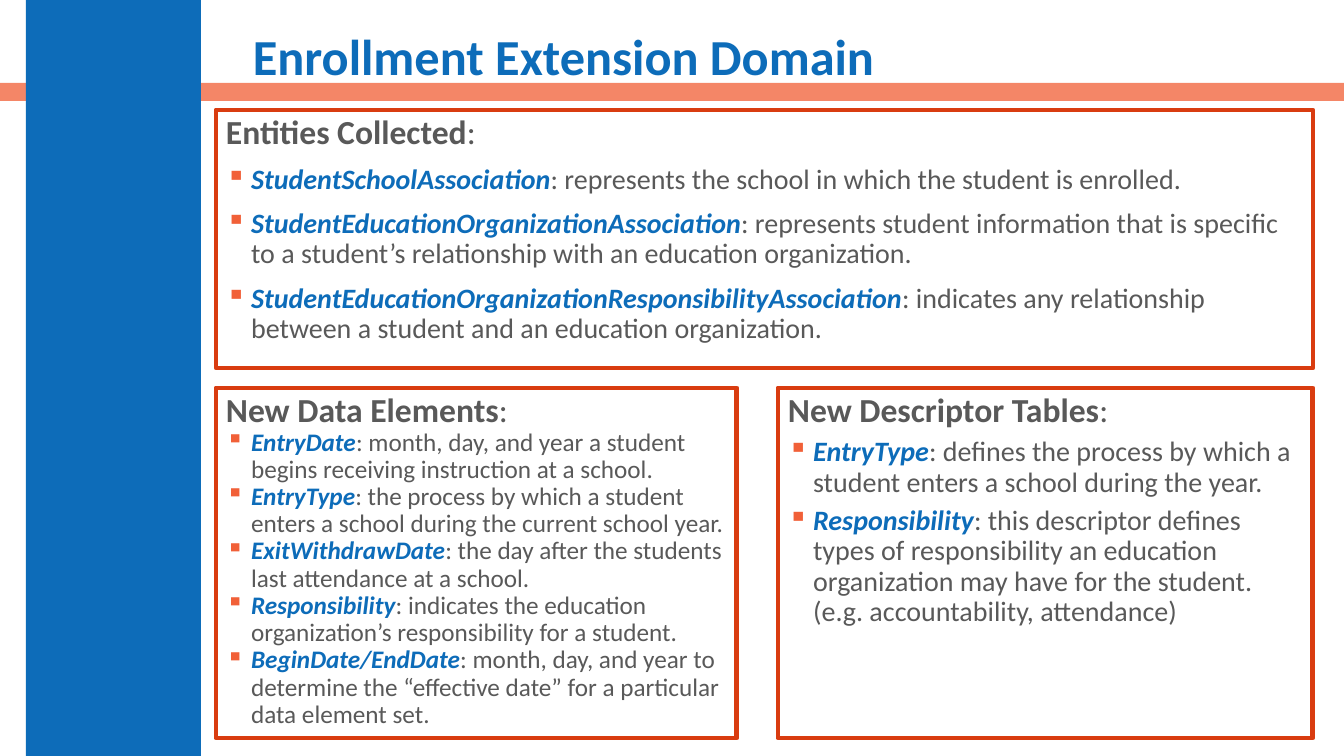
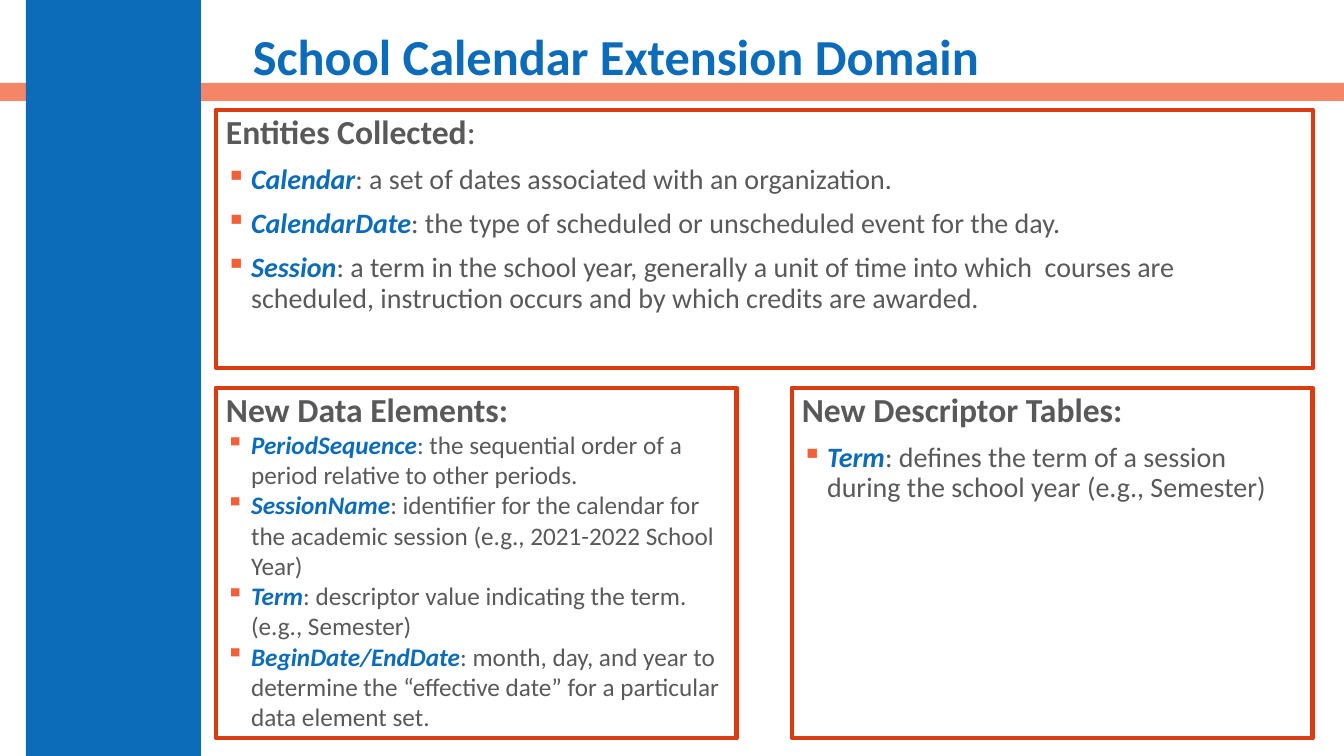
from dataclasses import dataclass

from lxml import etree
from pptx import Presentation
from pptx import util as u
from pptx.dml.color import RGBColor
from pptx.enum import shapes, text
from pptx.oxml.ns import qn


@dataclass(frozen=True)
class Theme:
    font: str = "Calibri"
    blue: str = "0D6CB9"
    coral: str = "F16038"
    red: str = "D93C10"
    gray: str = "595959"
    title: int = 36
    head: int = 24
    body: int = 20
    small: int = 18
    edge: float = 3.5
    tight: float = 0.9
    alpha: int = 76


def px(n):
    return u.Emu(round(n * 12192000 / 1344))


def put(obj, **vals):
    for key, val in vals.items():
        setattr(obj, key, val)


def sub(node, tag, **vals):
    return etree.SubElement(node, qn(tag), **vals)


class Deck:
    def __init__(self, theme):
        self.theme = theme
        self.prs = Presentation()
        put(self.prs, slide_width=px(1344), slide_height=px(756))
        self.slide = None

    def rect(self, x, y, w, h, fill=None, line=None):
        form = self.slide.shapes.add_shape(
            shapes.MSO_SHAPE.RECTANGLE, px(x), px(y), px(w), px(h))
        form.shadow.inherit = False
        if fill:
            form.fill.solid()
            form.fill.fore_color.rgb = RGBColor.from_string(fill)
        else:
            form.fill.background()
        if line:
            form.line.color.rgb = RGBColor.from_string(line)
            form.line.width = u.Pt(self.theme.edge)
        else:
            form.line.fill.background()
        return form

    def run(self, para, words, size, color, **vals):
        run = para.add_run()
        run.text = words
        put(run.font, name=self.theme.font, size=u.Pt(size), **vals)
        run.font.color.rgb = RGBColor.from_string(color)

    def bullet(self, para):
        props = para._p.get_or_add_pPr()
        props.set("marL", str(u.Inches(0.25)))
        props.set("indent", str(-u.Inches(0.25)))
        sub(sub(props, "a:buClr"), "a:srgbClr", val=self.theme.coral)
        sub(props, "a:buChar", char="▪")

    def page(self, title):
        """Start a slide with its band, side bar and title."""
        t = self.theme
        self.slide = self.prs.slides.add_slide(self.prs.slide_layouts[6])
        band = self.rect(0, 83, 1344, 18, t.coral)
        tint = band.fill._xPr.find(".//" + qn("a:srgbClr"))
        sub(tint, "a:alpha", val=str(t.alpha * 1000))
        self.rect(26, 0, 175, 756, t.blue)
        box = self.slide.shapes.add_textbox(px(243), px(18), px(1061), px(83))
        put(box.text_frame, word_wrap=True,
            vertical_anchor=text.MSO_ANCHOR.MIDDLE)
        para = box.text_frame.paragraphs[0]
        para.line_spacing = t.tight
        self.run(para, title, t.title, t.blue, bold=True)

    def panel(self, area, head, items, size, gap, lead=Theme.tight,
              colon=False):
        """Draw a framed list; colon sets whether its colon is bold."""
        t = self.theme
        frame = self.rect(*area, line=t.red).text_frame
        put(frame, word_wrap=True, vertical_anchor=text.MSO_ANCHOR.TOP)
        para = frame.paragraphs[0]
        put(para, alignment=text.PP_ALIGN.LEFT, line_spacing=t.tight)
        self.run(para, head, t.head, t.gray, bold=True)
        self.run(para, ":", t.head, t.gray, bold=colon)
        for term, note in items:
            para = frame.add_paragraph()
            put(para, alignment=text.PP_ALIGN.LEFT, line_spacing=lead,
                space_before=u.Pt(gap))
            self.bullet(para)
            self.run(para, term, size, t.blue, bold=True, italic=True)
            self.run(para, ": " + note, size, t.gray, bold=False)


# Panel areas: left, top, width, height
TOP = (216, 110, 1097, 258)
LEFT = (216, 388, 521, 350)
WIDE = (778, 388, 535, 350)
RIGHT = (792, 388, 521, 350)

# Headings and the item both slides share
ENTITY, DATA, TABLE = (
    "Entities Collected", "New Data Elements", "New Descriptor Tables")
DATES = ("BeginDate/EndDate", "month, day, and year to determine the "
         "“effective date” for a particular data element set.")


def main():
    t = Theme()
    deck = Deck(t)

    # Enrollment
    deck.page("Enrollment Extension Domain")
    deck.panel(TOP, ENTITY, [
        ("StudentSchoolAssociation",
         "represents the school in which the student is enrolled."),
        ("StudentEducationOrganizationAssociation",
         "represents student information that is specific to a student’s "
         "relationship with an education organization."),
        ("StudentEducationOrganizationResponsibilityAssociation",
         "indicates any relationship between a student and an education "
         "organization."),
    ], t.body, 10)
    deck.panel(LEFT, DATA, [
        ("EntryDate", "month, day, and year a student begins receiving "
         "instruction at a school."),
        ("EntryType", "the process by which a student enters a school "
         "during the current school year."),
        ("ExitWithdrawDate",
         "the day after the students last attendance at a school."),
        ("Responsibility", "indicates the education organization’s "
         "responsibility for a student."),
        DATES,
    ], t.small, 0)
    deck.panel(WIDE, TABLE, [
        ("EntryType", "defines the process by which a student enters a "
         "school during the year."),
        ("Responsibility", "this descriptor defines types of responsibility "
         "an education organization may have for the student. "
         "(e.g. accountability, attendance)"),
    ], t.body, 6)

    # School calendar
    deck.page("School Calendar Extension Domain")
    deck.panel(TOP, ENTITY, [
        ("Calendar", "a set of dates associated with an organization."),
        ("CalendarDate",
         "the type of scheduled or unscheduled event for the day."),
        ("Session", "a term in the school year, generally a unit of time "
         "into which  courses are scheduled, instruction occurs and by "
         "which credits are awarded."),
    ], t.body, 10)
    deck.panel(LEFT, DATA, [
        ("PeriodSequence",
         "the sequential order of a period relative to other periods."),
        ("SessionName", "identifier for the calendar for the academic "
         "session (e.g., 2021-2022 School Year)"),
        ("Term", "descriptor value indicating the term. (e.g., Semester)"),
        DATES,
    ], t.small, 0, lead=1.0, colon=True)
    deck.panel(RIGHT, TABLE, [
        ("Term", "defines the term of a session during the school year "
         "(e.g., Semester)"),
    ], t.body, 10, colon=True)

    deck.prs.save("out.pptx")


if __name__ == "__main__":
    main()
